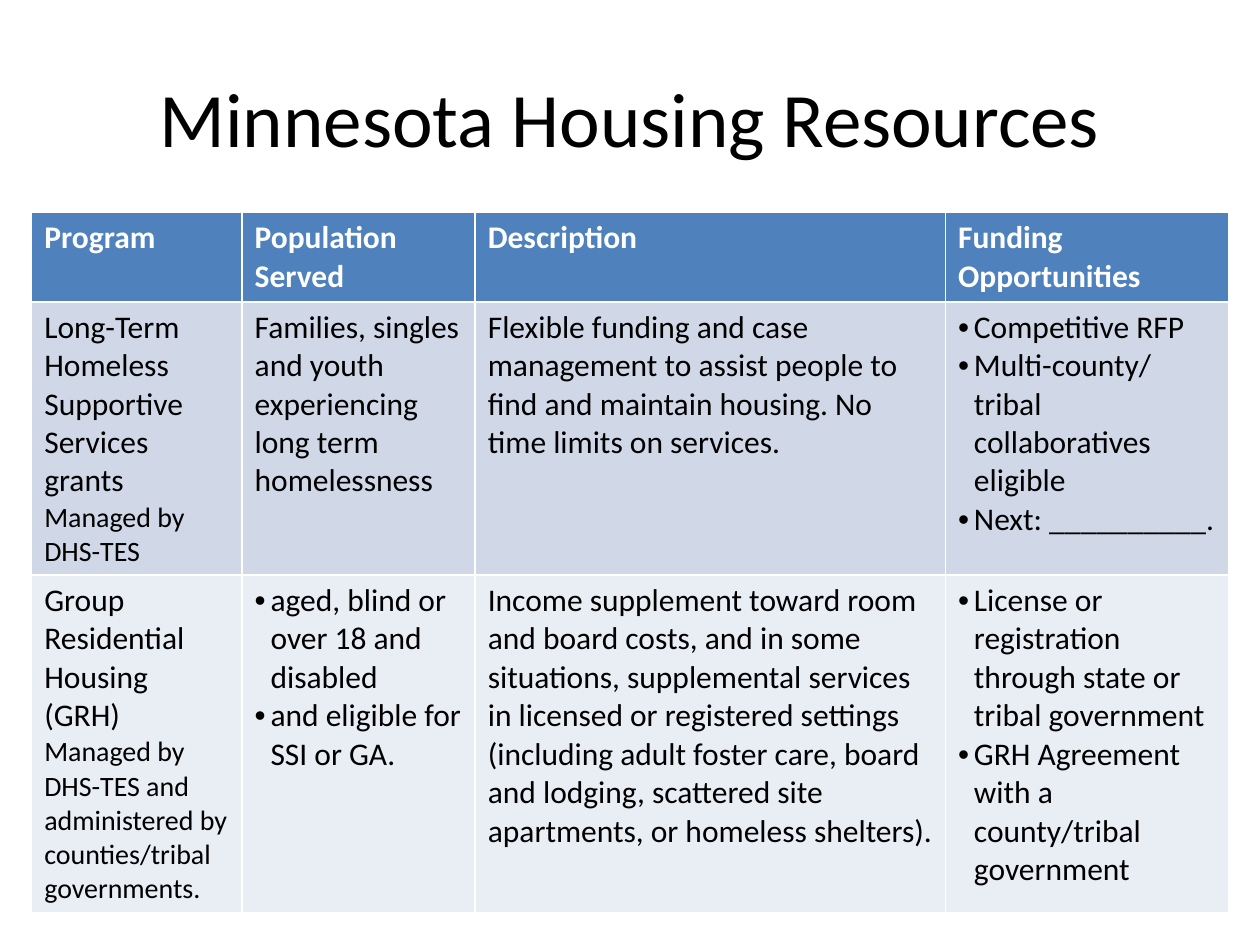
"""Build a slide with a table of Minnesota housing resources."""
import lxml.etree
import pptx
import pptx.dml.color
import pptx.enum.text
import pptx.oxml.ns
import pptx.util

Cm = pptx.util.Cm
INK = {"head": "4F81BD", "odd": "D0D8E8", "even": "E9EDF4",
       "white": "FFFFFF", "black": "000000"}
TITLE = "Minnesota Housing Resources"
HEADS = ["Program", "Population Served", "Description", "Funding Opportunities"]
ROWS = [
    [
        ["Long-Term Homeless Supportive Services grants", "Managed by DHS-TES"],
        ["Families, singles and youth experiencing long term homelessness"],
        ["Flexible funding and case management to assist people to find and "
         "maintain housing. No time limits on services."],
        ["Competitive RFP", "Multi-county/tribal collaboratives eligible",
         "Next: __________."],
    ],
    [
        ["Group Residential Housing (GRH)",
         "Managed by DHS-TES and administered by counties/tribal governments."],
        ["aged, blind or over 18 and disabled", "and eligible for SSI or GA."],
        ["Income supplement toward room and board costs, and in some situations, "
         "supplemental services in licensed or registered settings (including "
         "adult foster care, board and lodging, scattered site apartments, or "
         "homeless shelters)."],
        ["License or registration through state or tribal government",
         "GRH Agreement with a county/tribal government"],
    ],
]
WIDTHS = [4.24, 4.7, 9.48, 5.72]
HEIGHTS = [1.78, 5.5, 6.78]
LEFT, TOP = 0.64, 4.28
INDENT = Cm(0.32)


def tint(name):
    return pptx.dml.color.RGBColor.from_string(INK[name])


def write(para, text, size=18, color="black", bold=False, bullet=False, align=None):
    run = para.add_run()
    run.text = text
    run.font.name = "Calibri"
    run.font.size = pptx.util.Pt(size)
    run.font.bold = bold
    run.font.color.rgb = tint(color)
    para.alignment = align
    if bullet:
        props = para._p.get_or_add_pPr()
        props.set("marL", str(INDENT))
        props.set("indent", str(-INDENT))
        face = lxml.etree.SubElement(props, pptx.oxml.ns.qn("a:buFont"))
        face.set("typeface", "Arial")
        mark = lxml.etree.SubElement(props, pptx.oxml.ns.qn("a:buChar"))
        mark.set("char", "•")


def fill(cell, texts, shade, first=False, **form):
    cell.fill.solid()
    cell.fill.fore_color.rgb = tint(shade)
    frame = cell.text_frame
    for i, text in enumerate(texts):
        para = frame.add_paragraph() if i else frame.paragraphs[0]
        small = first and i > 0
        write(para, text, size=16 if small else 18,
              bullet=len(texts) > 1 and not first, **form)


def main():
    deck = pptx.Presentation()
    deck.slide_width, deck.slide_height = Cm(25.4), Cm(19.05)
    slide = deck.slides.add_slide(deck.slide_layouts[5])

    title = slide.shapes.title
    title.left, title.top = Cm(1.27), Cm(0.76)
    title.width, title.height = Cm(22.86), Cm(3.18)
    title.text_frame.vertical_anchor = pptx.enum.text.MSO_ANCHOR.MIDDLE
    write(title.text_frame.paragraphs[0], TITLE, size=44,
          align=pptx.enum.text.PP_ALIGN.CENTER)

    grid = slide.shapes.add_table(
        len(HEIGHTS), len(WIDTHS), Cm(LEFT), Cm(TOP),
        Cm(sum(WIDTHS)), Cm(sum(HEIGHTS))).table
    for col, width in zip(grid.columns, WIDTHS):
        col.width = Cm(width)
    for row, height in zip(grid.rows, HEIGHTS):
        row.height = Cm(height)

    for c, head in enumerate(HEADS):
        fill(grid.cell(0, c), [head], "head", color="white", bold=True)
    for r, row in enumerate(ROWS, 1):
        for c, texts in enumerate(row):
            fill(grid.cell(r, c), texts, "odd" if r % 2 else "even", first=c == 0)

    deck.save("out.pptx")


if __name__ == "__main__":
    main()
